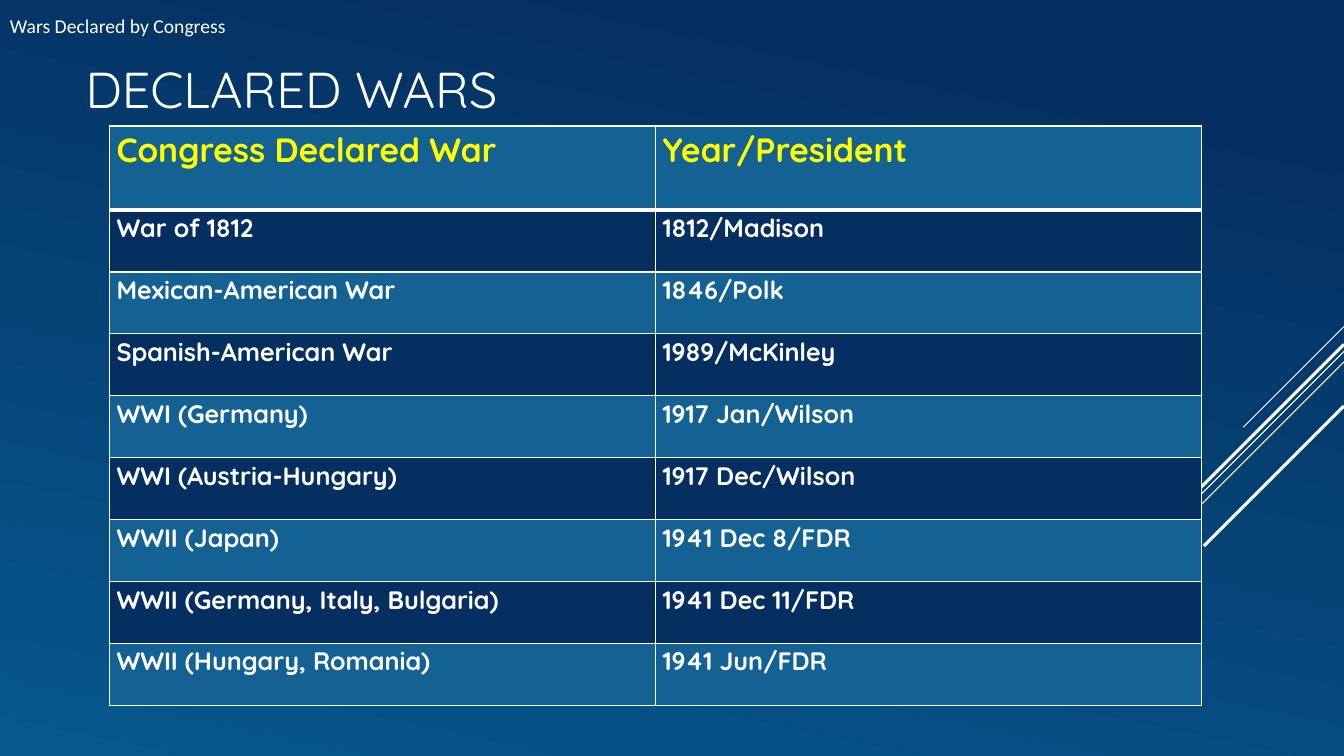
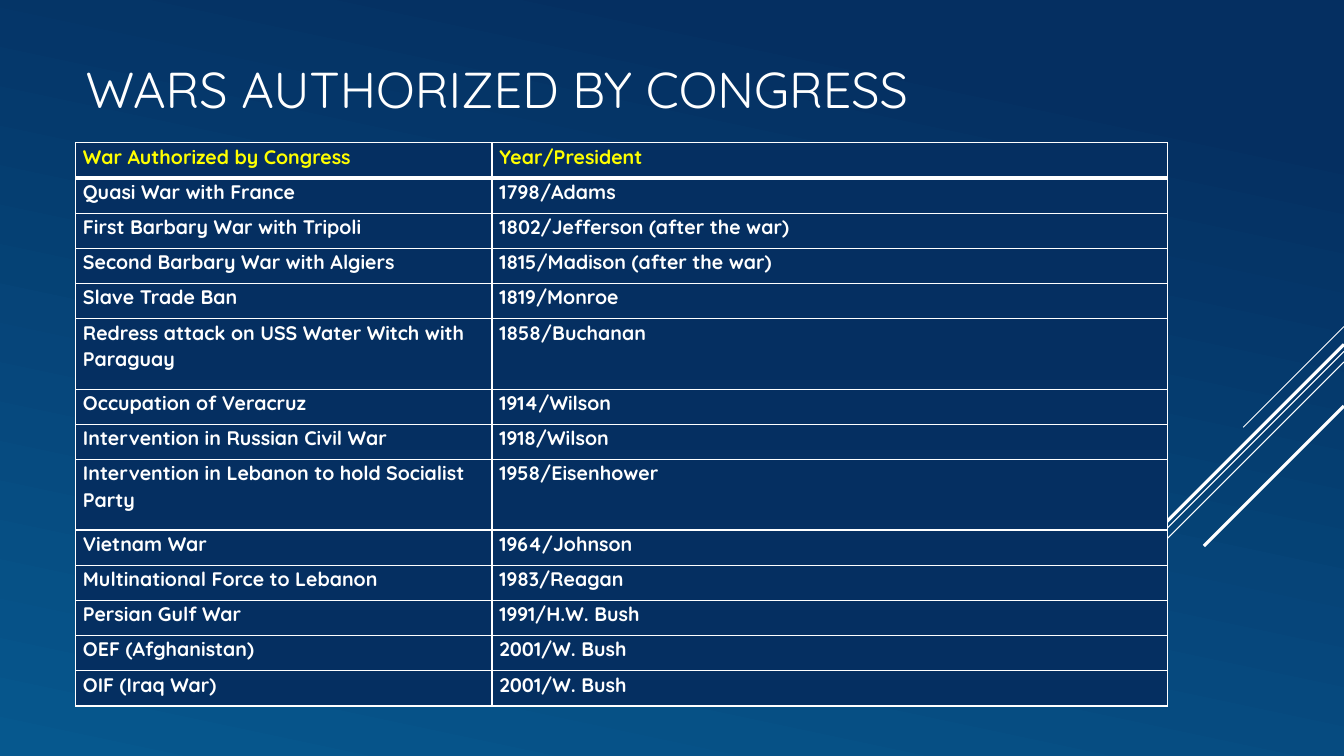
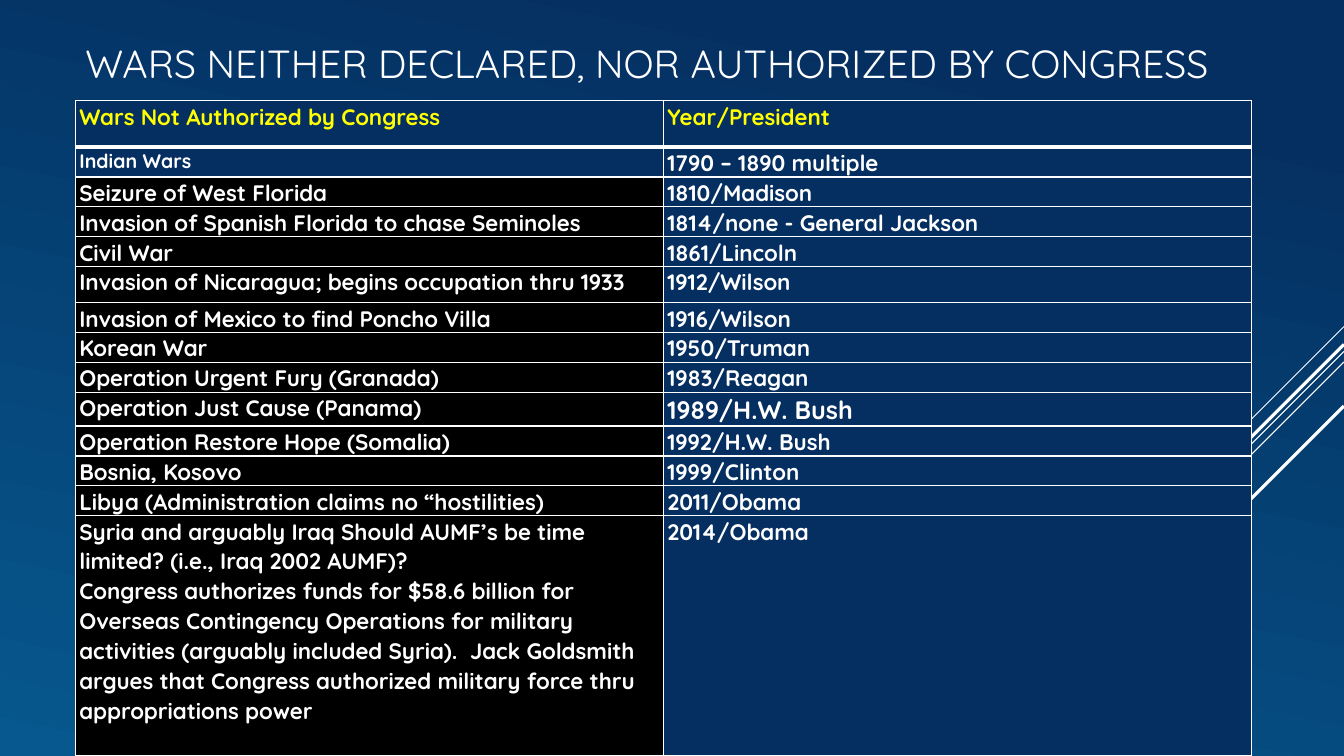
import pptx
import pptx.dml.color
import pptx.enum.shapes
import pptx.enum.text
import pptx.oxml.ns
import pptx.util
from lxml import etree

Pt = pptx.util.Pt
qn = pptx.oxml.ns.qn

COLORS = {"navy": "052F61", "blue": "146194", "sea": "06588E",
          "white": "FFFFFF", "yellow": "FFFF00", "black": "000000"}
FONT = "Quicksand"
WIDTH, HEIGHT = 960, 540

# Diagonal lines: start height at the right edge, 45-degree run, weight
STRIPES = [(233.25, 72, 0.75), (251, 235, 0.75), (258.5, 150, 0.75),
           (246, 138, 2.25), (290, 100, 2.25)]

# Content: boxes are left, top, width, height; row 0 of each table is its header
SLIDES = [
    {
        "title": "DECLARED WARS", "title_size": 36, "title_box": (54, 24, 672, 78),
        "caption": "Wars Declared by Congress",
        "origin": (78, 90), "cols": (390, 390), "inset": 5.25,
        "row_height": 44.25, "tall_rows": {0: 60},
        "header_size": 24, "size": 18, "sizes": {},
        "fill": lambda row, col: "navy" if row % 2 else "blue",
        "rows": [
            ("Congress Declared War", "Year/President"),
            ("War of 1812", "1812/Madison"),
            ("Mexican-American War", "1846/Polk"),
            ("Spanish-American War", "1989/McKinley"),
            ("WWI (Germany)", "1917 Jan/Wilson"),
            ("WWI (Austria-Hungary)", "1917 Dec/Wilson"),
            ("WWII (Japan)", "1941 Dec 8/FDR"),
            ("WWII (Germany, Italy, Bulgaria)", "1941 Dec 11/FDR"),
            ("WWII (Hungary, Romania)", "1941 Jun/FDR"),
        ],
    },
    {
        "title": "WARS AUTHORIZED BY CONGRESS", "title_size": 36,
        "title_box": (54, 24, 672, 78),
        "origin": (54, 102), "cols": (297.5, 482.5), "inset": 5.25,
        "row_height": 25.15, "tall_rows": {5: 50.3, 8: 50.3},
        "header_size": 14, "size": 14, "sizes": {},
        "fill": lambda row, col: "navy",
        "rows": [
            ("War Authorized by Congress", "Year/President"),
            ("Quasi War with France", "1798/Adams"),
            ("First Barbary War with Tripoli", "1802/Jefferson (after the war)"),
            ("Second Barbary War with Algiers", "1815/Madison (after the war)"),
            ("Slave Trade Ban", "1819/Monroe"),
            ("Redress attack on USS Water Witch with Paraguay", "1858/Buchanan"),
            ("Occupation of Veracruz", "1914/Wilson"),
            ("Intervention in Russian Civil War", "1918/Wilson"),
            ("Intervention in Lebanon to hold Socialist Party", "1958/Eisenhower"),
            ("Vietnam War", "1964/Johnson"),
            ("Multinational Force to Lebanon", "1983/Reagan"),
            ("Persian Gulf War", "1991/H.W. Bush"),
            ("OEF (Afghanistan)", "2001/W. Bush"),
            ("OIF (Iraq War)", "2001/W. Bush"),
        ],
    },
    {
        "title": "WARS NEITHER DECLARED, NOR AUTHORIZED BY CONGRESS",
        "title_size": 28, "title_box": (54, 24, 870, 42),
        "origin": (54, 72), "cols": (420, 420), "inset": 2.7,
        "row_height": 21.4, "tall_rows": {0: 33, 5: 25.75, 9: 24, 13: 171.25},
        "header_size": 16, "size": 16, "sizes": {(1, 0): 14, (9, 1): 18},
        "fill": lambda row, col: "black" if col == 0 and row > 1 else "navy",
        "rows": [
            ("Wars Not Authorized by Congress", "Year/President"),
            ("Indian Wars", "1790 – 1890 multiple"),
            ("Seizure of West Florida", "1810/Madison"),
            ("Invasion of Spanish Florida to chase Seminoles",
             "1814/none - General Jackson"),
            ("Civil War", "1861/Lincoln"),
            ("Invasion of Nicaragua; begins occupation thru 1933", "1912/Wilson"),
            ("Invasion of Mexico to find Poncho Villa", "1916/Wilson"),
            ("Korean War", "1950/Truman"),
            ("Operation Urgent Fury (Granada)", "1983/Reagan"),
            ("Operation Just Cause (Panama)", "1989/H.W. Bush"),
            ("Operation Restore Hope (Somalia)", "1992/H.W. Bush"),
            ("Bosnia, Kosovo", "1999/Clinton"),
            ("Libya (Administration claims no “hostilities)", "2011/Obama"),
            ("Syria and arguably Iraq Should AUMF’s be time limited? "
             "(i.e., Iraq 2002 AUMF)?\n"
             "Congress authorizes funds for $58.6 billion for Overseas Contingency "
             "Operations for military activities (arguably included Syria).  Jack "
             "Goldsmith argues that Congress authorized military force thru "
             "appropriations power", "2014/Obama"),
        ],
    },
]


def rgb(name):
    return pptx.dml.color.RGBColor.from_string(COLORS[name])


def add_run(p, text, size, color="white", font=FONT, bold=False):
    r = p.add_run()
    r.text = text
    r.font.name, r.font.size, r.font.bold = font, Pt(size), bold
    r.font.color.rgb = rgb(color)


def add_text(s, box, text, size, font=FONT):
    tf = s.shapes.add_textbox(*map(Pt, box)).text_frame
    tf.word_wrap = True
    tf.vertical_anchor = pptx.enum.text.MSO_ANCHOR.MIDDLE
    add_run(tf.paragraphs[0], text, size, font=font)


def set_background(master):
    fill = master.background.fill
    fill.gradient()
    fill.gradient_angle = 360 - 102
    for stop, (position, color) in zip(fill.gradient_stops,
                                       [(0.13, "navy"), (1, "sea")]):
        stop.position = position
        stop.color.rgb = rgb(color)


def add_stripes(s):
    for top, run, weight in STRIPES:
        line = s.shapes.add_connector(
            pptx.enum.shapes.MSO_CONNECTOR.STRAIGHT,
            Pt(WIDTH), Pt(top), Pt(WIDTH - run), Pt(top + run))
        line.line.color.rgb = rgb("white")
        line.line.width = Pt(weight)
        etree.SubElement(line._element.spPr, qn("a:effectLst"))


def set_borders(cell, row):
    # The rule under the header is heavier than the rest
    weights = {"L": 1, "R": 1, "T": 3 if row == 1 else 1, "B": 3 if row == 0 else 1}
    tc_pr = cell._tc.get_or_add_tcPr()
    for side, weight in weights.items():
        ln = etree.SubElement(tc_pr, qn("a:ln" + side), w=str(Pt(weight)))
        fill = etree.SubElement(ln, qn("a:solidFill"))
        etree.SubElement(fill, qn("a:srgbClr"), val=COLORS["white"])


def fill_cell(cell, text, row, col, d):
    set_borders(cell, row)
    cell.fill.solid()
    cell.fill.fore_color.rgb = rgb(d["fill"](row, col))
    cell.margin_left = cell.margin_right = Pt(d["inset"])
    cell.margin_top = cell.margin_bottom = 0
    size = d["sizes"].get((row, col), d["size"] if row else d["header_size"])
    tf = cell.text_frame
    for i, part in enumerate(text.split("\n")):
        p = tf.add_paragraph() if i else tf.paragraphs[0]
        p.line_spacing = 1.07
        add_run(p, part, size, "white" if row else "yellow", bold=True)


def add_war_table(s, d):
    heights = [d["tall_rows"].get(i, d["row_height"]) for i in range(len(d["rows"]))]
    box = (*d["origin"], sum(d["cols"]), sum(heights))
    table = s.shapes.add_table(len(heights), len(d["cols"]), *map(Pt, box)).table
    table.horz_banding = False
    for column, width in zip(table.columns, d["cols"]):
        column.width = Pt(width)
    for i, (height, texts) in enumerate(zip(heights, d["rows"])):
        table.rows[i].height = Pt(height)
        for j, text in enumerate(texts):
            fill_cell(table.cell(i, j), text, i, j, d)


def main():
    prs = pptx.Presentation()
    prs.slide_width, prs.slide_height = Pt(WIDTH), Pt(HEIGHT)
    set_background(prs.slide_master)
    for d in SLIDES:
        s = prs.slides.add_slide(prs.slide_layouts[6])
        add_stripes(s)
        add_text(s, d["title_box"], d["title"], d["title_size"])
        add_war_table(s, d)
        if "caption" in d:
            add_text(s, (0, 0, WIDTH, 36), d["caption"], 14, "Calibri")
    prs.save("out.pptx")


if __name__ == "__main__":
    main()
